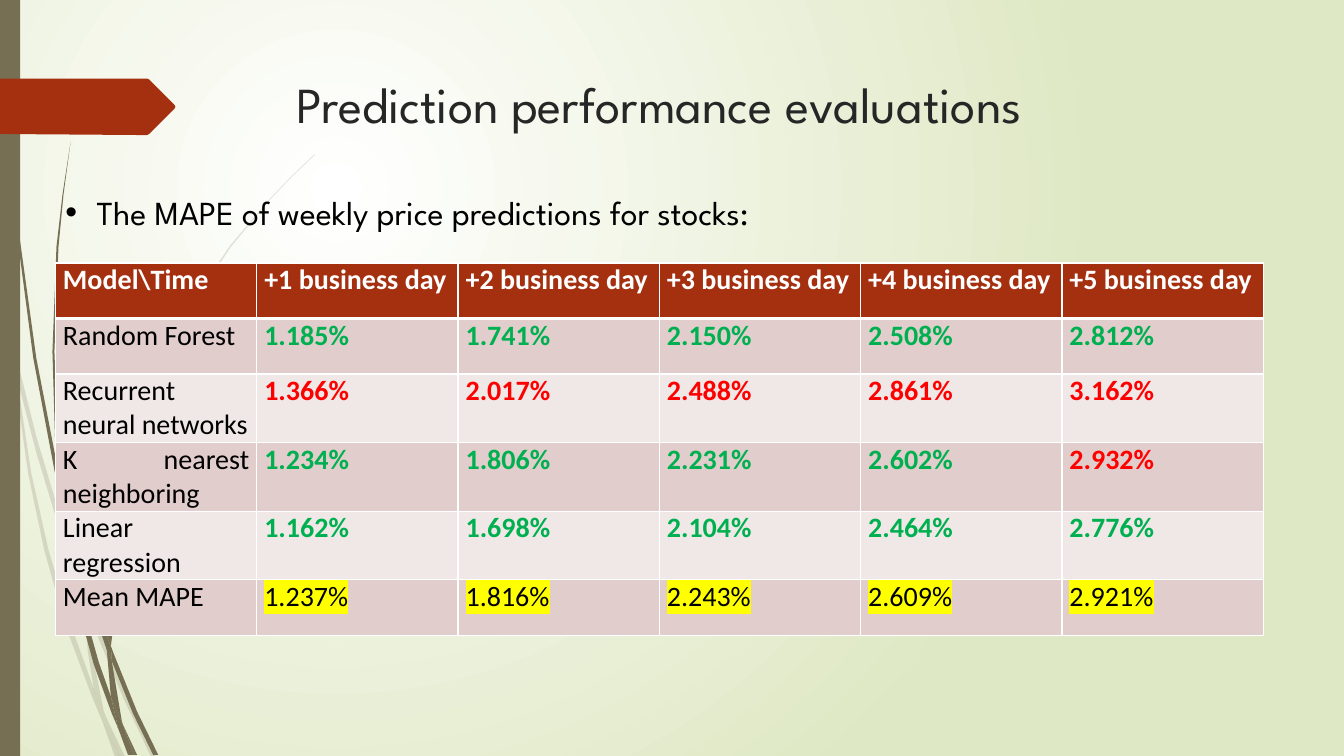
"""Build the slide on prediction performance evaluations."""
from lxml import etree
from pptx import Presentation
from pptx.dml.color import RGBColor
from pptx.enum.text import MSO_ANCHOR, MSO_AUTO_SIZE, PP_ALIGN
from pptx.enum.shapes import MSO_SHAPE
from pptx.oxml.ns import qn
from pptx.util import Inches, Pt

TOP = MSO_ANCHOR.TOP
RECTANGLE = MSO_SHAPE.RECTANGLE
GROW, FIXED = MSO_AUTO_SIZE.SHAPE_TO_FIT_TEXT, MSO_AUTO_SIZE.NONE
JUSTIFY, LEFT = PP_ALIGN.JUSTIFY, PP_ALIGN.LEFT

TITLE = "Prediction performance evaluations"
BULLET = "The MAPE of weekly price predictions for stocks:"
HEADER = ["Model\\Time"] + [f"+{day} business day" for day in range(1, 6)]
MODELS = {
    "Random Forest": (1.185, 1.741, 2.150, 2.508, 2.812),
    "Recurrent neural networks": (1.366, 2.017, 2.488, 2.861, 3.162),
    "K nearest neighboring": (1.234, 1.806, 2.231, 2.602, 2.932),
    "Linear regression ": (1.162, 1.698, 2.104, 2.464, 2.776),
    "Mean MAPE": (1.237, 1.816, 2.243, 2.609, 2.921),
}
MEANS = MODELS["Mean MAPE"]

WHITE = RGBColor(0xFF, 0xFF, 0xFF)
BLACK = RGBColor(0x00, 0x00, 0x00)
CHARCOAL = RGBColor(0x26, 0x26, 0x26)
PALE_GREEN = RGBColor(0xDF, 0xE8, 0xC4)
OLIVE = RGBColor(0x76, 0x6F, 0x54)
RUST = RGBColor(0xA5, 0x30, 0x10)
BANDS = (RGBColor(0xE1, 0xCD, 0xCC), RGBColor(0xF0, 0xE8, 0xE7))
GREEN = RGBColor(0x00, 0xB0, 0x50)
RED = RGBColor(0xFF, 0x00, 0x00)
YELLOW = RGBColor(0xFF, 0xFF, 0x00)

WIDTH, HEIGHT = 13.33, 7.5
TABLE_LEFT, TABLE_TOP, TABLE_WIDTH = 0.55, 2.61, 11.98
ROW_HEIGHT, TALL_ROW_HEIGHT, LONG_NAME = 0.55, 0.68, 15
TITLE_FONT = {"name": "League Spartan", "size": Pt(36), "color": CHARCOAL}
BULLET_FONT = {"name": "League Spartan", "size": Pt(24), "color": BLACK}
CELL_FONT = {"name": "Calibri", "size": Pt(20)}
CELL_FORMAT = {"margin_left": Pt(5.4), "margin_right": Pt(5.4),
               "margin_top": 0, "margin_bottom": 0, "vertical_anchor": TOP}

LIGHT_GRASS = [
    [(0.11, 3.5), (0.09, 3.22), (0, 2.82), (0, 2.99), (0.1, 3.44)],
    [(0.58, 5.22), (0.84, 5.99), (0.85, 5.86), (0.62, 5.2), (0.36, 4.33), (0.14, 3.45),
     (0.17, 3.76), (0.36, 4.49)],
    [(0.92, 6.07), (0.88, 5.96), (0.88, 6.1), (1.23, 6.94), (1.5, 7.51), (1.55, 7.51),
     (1.27, 6.92)],
    [(1.19, 7.51), (1.24, 7.51), (1.05, 7.11)],
    [(0.93, 6.83), (0.7, 6.19), (0.48, 5.45), (0.31, 4.69), (0.17, 3.76), (0.11, 3.5),
     (0.28, 4.7), (0.44, 5.46), (0.65, 6.21), (0.92, 6.93), (1.01, 7.14), (0.99, 7.07)],
    [(0.84, 5.99), (0.87, 6.46), (0.93, 6.83), (0.96, 6.92), (1.05, 7.11), (1.03, 7.06),
     (0.91, 6.46), (0.88, 6.1), (0.88, 6.08)],
    [(0.88, 5.84), (0.95, 5.22), (1.1, 4.62), (1.32, 4.04), (1.6, 3.49), (2.29, 2.45),
     (2.68, 1.98), (2.9, 1.75), (3.12, 1.54), (3.12, 1.53), (2.89, 1.75), (2.68, 1.97),
     (2.28, 2.44), (1.58, 3.48), (1.29, 4.03), (1.07, 4.61), (0.92, 5.22), (0.85, 5.84),
     (0.85, 5.86), (0.88, 5.96)],
    [(1.01, 7.14), (1.14, 7.51), (1.19, 7.51)],
    [(0.88, 6.08), (0.88, 6.1), (0.88, 5.96), (0.85, 5.86), (0.84, 5.99)],
    [(0.96, 6.92), (0.93, 6.83), (0.99, 7.07), (1.01, 7.14), (1.19, 7.51), (1.05, 7.11)],
]
DARK_GRASS = [
    [(0.07, 1.1), (0.17, 2.33), (0.33, 3.55), (0.56, 4.77), (0.57, 4.81), (0.55, 4.57),
     (0.55, 4.53), (0.36, 3.55), (0.19, 2.32), (0.08, 1.09), (0.05, 0.48), (0.04, 0),
     (0.03, 0), (0.04, 0.48)],
    [(0.88, 5.92), (1.06, 6.45), (1.06, 6.33), (1.06, 6.31), (0.93, 5.9), (0.75, 5.32),
     (0.6, 4.72), (0.64, 5.05), (0.76, 5.49)],
    [(1.13, 6.49), (1.1, 6.41), (1.11, 6.56), (1.32, 7.08), (1.52, 7.49), (1.57, 7.49),
     (1.36, 7.06)],
    [(1.1, 6.91), (0.98, 6.57), (0.84, 6.07), (0.72, 5.56), (0.64, 5.05), (0.57, 4.77),
     (0.68, 5.57), (0.79, 6.08), (0.93, 6.59), (1.11, 7.08), (1.17, 7.22), (1.16, 7.17)],
    [(0.6, 4.72), (0.58, 4.53), (0.54, 3.49), (0.58, 2.45), (0.63, 1.93), (0.7, 1.41),
     (0.62, 1.93), (0.56, 2.45), (0.52, 3.49), (0.55, 4.49), (0.6, 4.72)],
    [(1.33, 7.49), (1.36, 7.49), (1.22, 7.19)],
    [(0.57, 4.77), (0.64, 5.05), (0.6, 4.72), (0.55, 4.49), (0.55, 4.53)],
    [(1.11, 6.33), (1.15, 5.92), (1.25, 5.52), (1.58, 4.76), (2.05, 4.06), (2.31, 3.74),
     (2.45, 3.59), (2.61, 3.44), (2.6, 3.44), (2.45, 3.58), (2.31, 3.73), (2.04, 4.05),
     (1.56, 4.74), (1.22, 5.51), (1.11, 5.91), (1.06, 6.31), (1.1, 6.41)],
    [(1.17, 7.22), (1.27, 7.49), (1.31, 7.49)],
    [(1.06, 6.45), (1.1, 6.91), (1.16, 7.06), (1.22, 7.19), (1.21, 7.16), (1.11, 6.56),
     (1.09, 6.51)],
    [(1.06, 6.45), (1.09, 6.51), (1.11, 6.56), (1.1, 6.41), (1.06, 6.31), (1.06, 6.33)],
    [(1.16, 7.06), (1.1, 6.91), (1.16, 7.17), (1.17, 7.22), (1.3, 7.49), (1.33, 7.49),
     (1.22, 7.19)],
]
ARROW = [(1.73, 1.08), (1.48, 1.33), (1.46, 1.34), (1.36, 1.34), (0, 1.33), (0, 0.78),
         (1.36, 0.78), (1.46, 0.78), (1.48, 0.79), (1.73, 1.04), (1.74, 1.06)]


def set_format(target, values):
    for name, value in values.items():
        if name == "color":
            target.color.rgb = value
        else:
            setattr(target, name, value)


def add_element(parent, tag, **attributes):
    return etree.SubElement(parent, qn(tag), attributes)


def paint_background(slide):
    fill = slide.background.fill
    fill.gradient()
    for stop, color in zip(fill.gradient_stops, (WHITE, PALE_GREEN)):
        stop.color.rgb = color
    gradient = slide.background._cSld.find(".//" + qn("a:gradFill"))
    gradient.remove(gradient.find(qn("a:lin")))
    circle = add_element(gradient, "a:path", path="circle")
    add_element(circle, "a:fillToRect", l="50000", t="50000", r="100000", b="100000")


def paint(shape, color):
    shape.shadow.inherit = False
    shape.fill.solid()
    shape.fill.fore_color.rgb = color
    shape.line.fill.background()


def add_outline(slide, points, color, alpha=None):
    corners = [(Inches(x), Inches(y)) for x, y in points]
    builder = slide.shapes.build_freeform(*corners[0])
    builder.add_line_segments(corners[1:], close=True)
    shape = builder.convert_to_shape()
    paint(shape, color)
    if alpha:
        tint = shape._element.spPr.find(".//" + qn("a:srgbClr"))
        add_element(tint, "a:alpha", val=str(alpha * 1000))


def write(paragraph, text, font, alignment):
    paragraph.alignment = alignment
    run = paragraph.add_run()
    run.text = text
    set_format(run.font, font)
    return run


def add_text(slide, box, text, font, sizing):
    frame = slide.shapes.add_textbox(*map(Inches, box)).text_frame
    set_format(frame, {"word_wrap": True, "auto_size": sizing})
    paragraph = frame.paragraphs[0]
    write(paragraph, text, font, LEFT)
    return paragraph


def add_bullet(paragraph):
    properties = paragraph._p.get_or_add_pPr()
    properties.set("marL", str(Inches(0.31)))
    properties.set("indent", str(-Inches(0.31)))
    add_element(properties, "a:buFont", typeface="Arial")
    add_element(properties, "a:buChar", char="•")


def add_header_borders(cell):
    properties = cell._tc.get_or_add_tcPr()
    widths = {"a:lnL": 1, "a:lnR": 1, "a:lnT": 1, "a:lnB": 3}
    for index, (tag, width) in enumerate(widths.items()):
        line = etree.Element(qn(tag), w=str(Pt(width)))
        add_element(add_element(line, "a:solidFill"), "a:srgbClr", val=str(WHITE))
        properties.insert(index, line)


def cell_font(row, column, value):
    if row == 0:
        return {"color": WHITE, "bold": True}
    if column == 0 or row == len(MODELS):
        return {"color": BLACK, "bold": False}
    return {"color": RED if value > MEANS[column - 1] else GREEN, "bold": True}


def add_results(slide):
    rows = [HEADER] + [[model, *values] for model, values in MODELS.items()]
    heights = [TALL_ROW_HEIGHT if len(row[0]) > LONG_NAME else ROW_HEIGHT for row in rows]
    box = (TABLE_LEFT, TABLE_TOP, TABLE_WIDTH, sum(heights))
    table = slide.shapes.add_table(len(rows), len(HEADER), *map(Inches, box)).table
    for row, values in enumerate(rows):
        table.rows[row].height = Inches(heights[row])
        for column, value in enumerate(values):
            cell = table.cell(row, column)
            set_format(cell, CELL_FORMAT)
            cell.fill.solid()
            cell.fill.fore_color.rgb = BANDS[(row - 1) % 2] if row else RUST
            if row == 0:
                add_header_borders(cell)
            text = value if isinstance(value, str) else f"{value:.3f}%"
            font = CELL_FONT | cell_font(row, column, value)
            run = write(cell.text_frame.paragraphs[0], text, font, JUSTIFY)
            if row == len(MODELS) and column:
                highlight = etree.Element(qn("a:highlight"))
                add_element(highlight, "a:srgbClr", val=str(YELLOW))
                run._r.rPr.find(qn("a:solidFill")).addnext(highlight)


def main():
    presentation = Presentation()
    presentation.slide_width, presentation.slide_height = Inches(WIDTH), Inches(HEIGHT)
    slide = presentation.slides.add_slide(presentation.slide_layouts[6])
    paint_background(slide)
    for blades, alpha in ((LIGHT_GRASS, 20), (DARK_GRASS, None)):
        for points in blades:
            add_outline(slide, points, OLIVE, alpha)
    paint(slide.shapes.add_shape(RECTANGLE, 0, 0, Inches(0.2), Inches(HEIGHT)), OLIVE)
    add_outline(slide, ARROW, RUST)
    add_text(slide, (2.84, 0.68, 9.75, 1.4), TITLE, TITLE_FONT, FIXED)
    add_results(slide)
    add_bullet(add_text(slide, (0.55, 1.85, 11.2, 0.5), BULLET, BULLET_FONT, GROW))
    presentation.save("out.pptx")


if __name__ == "__main__":
    main()
